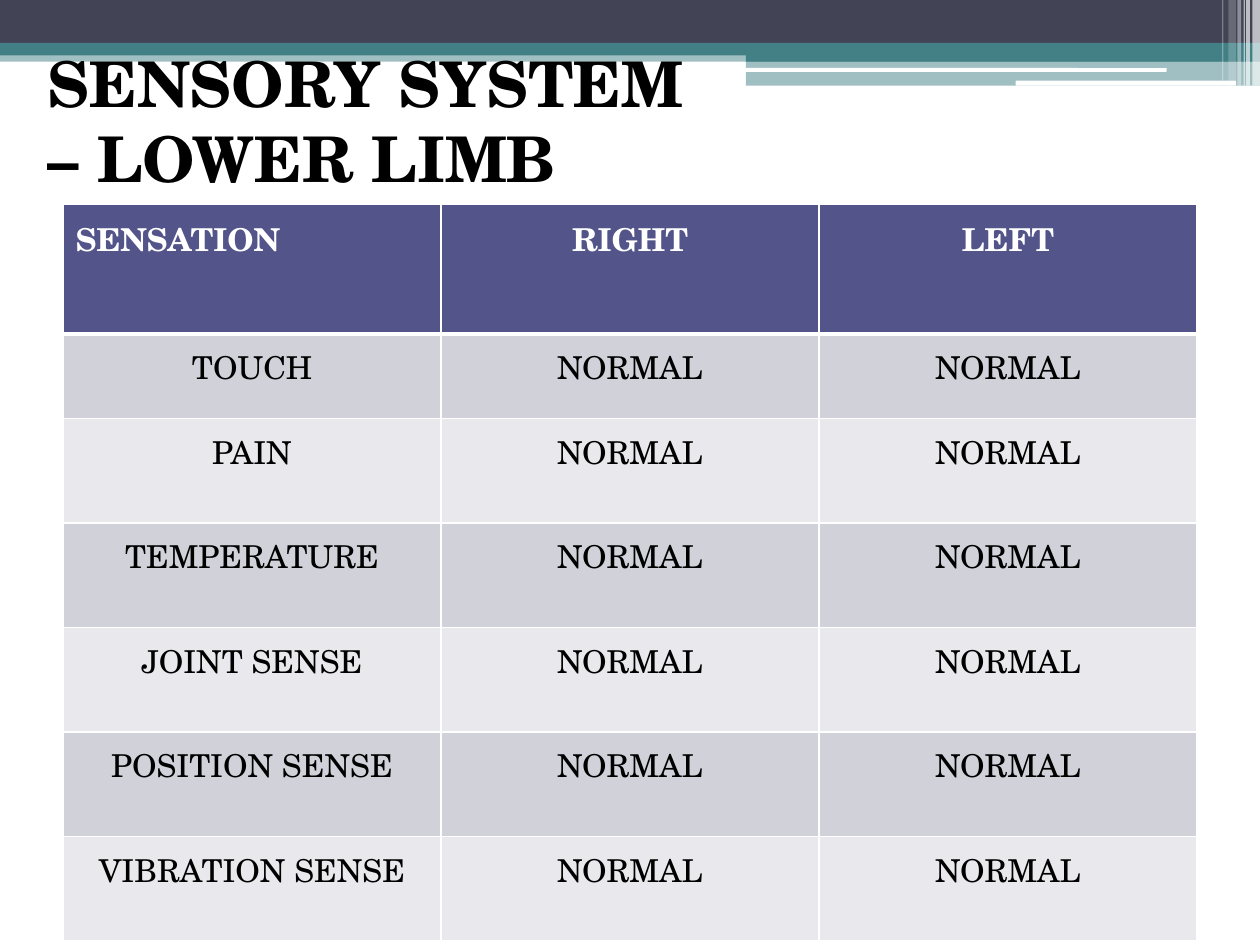
from dataclasses import dataclass

from lxml import etree
from pptx import Presentation
from pptx.dml.color import RGBColor
from pptx.enum.shapes import MSO_SHAPE
from pptx.enum.text import MSO_ANCHOR, PP_ALIGN
from pptx.oxml.ns import qn
from pptx.util import Inches, Pt

RECTANGLE = MSO_SHAPE.RECTANGLE
ROUNDED = MSO_SHAPE.ROUNDED_RECTANGLE
TOP = MSO_ANCHOR.TOP
LEFT = PP_ALIGN.LEFT
CENTER = PP_ALIGN.CENTER


@dataclass(frozen=True)
class Theme:
    font: str = "TeX Gyre Schola"
    title_size: int = 36
    table_size: int = 18
    black: str = "000000"
    white: str = "FFFFFF"
    slate: str = "424456"
    teal: str = "438086"
    header: str = "53548A"
    bands: tuple = ("D1D1DA", "E9E9ED")


THEME = Theme()

BANDS = [
    (0, 0.4, 10, 0.09, THEME.teal, 50),
    (0, 0, 10, 0.34, THEME.slate, 100),
    (0, 0.34, 10, 0.1, THEME.teal, 100),
    (5.92, 0.39, 4.08, 0.1, THEME.teal, 100),
    (5.92, 0.48, 4.08, 0.2, THEME.teal, 50),
]
HIGHLIGHTS = [(5.91, 0.54, 3.35, 0.03), (8.06, 0.64, 1.75, 0.04)]
STRIPES = [
    (9.94, 0.06, 0.68, 65),
    (9.89, 0.03, 0.68, 65),
    (9.87, 0.01, 0.68, 60),
    (9.82, 0.03, 0.68, 40),
    (9.75, 0.06, 0.64, 20),
    (9.7, 0.01, 0.64, 30),
]
HEADINGS = ["SENSATION", "RIGHT", "LEFT"]
SENSATIONS = ["TOUCH", "PAIN", "TEMPERATURE", "JOINT SENSE",
              "POSITION SENSE", "VIBRATION SENSE"]
ROW_HEIGHTS = [1.03, 0.67] + [0.83] * 5


def add_bar(slide, left, top, width, height, color, opacity=100, preset=RECTANGLE):
    """Add a borderless bar with the given opacity in percent."""
    shape = slide.shapes.add_shape(
        preset, Inches(left), Inches(top), Inches(width), Inches(height))
    shape.shadow.inherit = False
    shape.line.fill.background()
    shape.fill.solid()
    shape.fill.fore_color.rgb = RGBColor.from_string(color)
    if opacity < 100:
        fill_color = shape.fill._xPr.find(qn("a:solidFill"))[0]
        etree.SubElement(fill_color, qn("a:alpha"), val=str(opacity * 1000))


def add_banner(slide):
    """Draw the layered bars and stripes along the top edge."""
    for band in BANDS:
        add_bar(slide, *band)
    for highlight in HIGHLIGHTS:
        add_bar(slide, *highlight, THEME.white, preset=ROUNDED)
    for left, width, height, opacity in STRIPES:
        add_bar(slide, left, 0, width, height, THEME.white, opacity)


def write_text(paragraph, text, size, color, bold, alignment):
    """Write one formatted run into a paragraph."""
    paragraph.alignment = alignment
    run = paragraph.add_run()
    run.text = text
    run.font.name = THEME.font
    run.font.size = Pt(size)
    run.font.bold = bold
    run.font.color.rgb = RGBColor.from_string(color)


def add_title(slide, text):
    """Add the slide title in a wrapping text box."""
    shape = slide.shapes.add_textbox(
        Inches(0.28), Inches(0.3), Inches(5.43), Inches(1.31))
    shape.text_frame.word_wrap = True
    shape.text_frame.vertical_anchor = TOP
    write_text(shape.text_frame.paragraphs[0], text,
               THEME.title_size, THEME.black, True, LEFT)


def set_borders(cell, bottom_width):
    """Give a cell white borders, with its own bottom width."""
    properties = cell._tc.get_or_add_tcPr()
    widths = {"a:lnL": 1, "a:lnR": 1, "a:lnT": 1, "a:lnB": bottom_width}
    for position, (tag, width) in enumerate(widths.items()):
        line = etree.Element(qn(tag), w=str(Pt(width)))
        fill = etree.SubElement(line, qn("a:solidFill"))
        etree.SubElement(fill, qn("a:srgbClr"), val=THEME.white)
        properties.insert(position, line)


def fill_cell(cell, text, is_header, background, alignment):
    """Set the text, fill and borders of a table cell."""
    cell.vertical_anchor = TOP
    cell.margin_top = Inches(0.08)
    cell.fill.solid()
    cell.fill.fore_color.rgb = RGBColor.from_string(background)
    color = THEME.white if is_header else THEME.black
    write_text(cell.text_frame.paragraphs[0], text,
               THEME.table_size, color, is_header, alignment)
    set_borders(cell, 3 if is_header else 1)


def add_findings_table(slide):
    """Add the table of sensations on both sides."""
    rows = [HEADINGS] + [[name, "NORMAL", "NORMAL"] for name in SENSATIONS]
    table = slide.shapes.add_table(
        len(rows), len(HEADINGS), Inches(0.5), Inches(1.62),
        Inches(9), Inches(sum(ROW_HEIGHTS))).table
    for column in table.columns:
        column.width = Inches(3)
    for row_index, values in enumerate(rows):
        is_header = row_index == 0
        table.rows[row_index].height = Inches(ROW_HEIGHTS[row_index])
        background = THEME.header if is_header else THEME.bands[(row_index - 1) % 2]
        for column_index, text in enumerate(values):
            alignment = LEFT if is_header and column_index == 0 else CENTER
            fill_cell(table.cell(row_index, column_index), text,
                      is_header, background, alignment)


def main():
    """Build and save the slide."""
    presentation = Presentation()
    presentation.slide_width = Inches(10)
    presentation.slide_height = Inches(7.5)
    slide = presentation.slides.add_slide(presentation.slide_layouts[6])
    add_banner(slide)
    add_findings_table(slide)
    add_title(slide, "SENSORY SYSTEM – LOWER LIMB")
    presentation.save("out.pptx")


if __name__ == "__main__":
    main()
